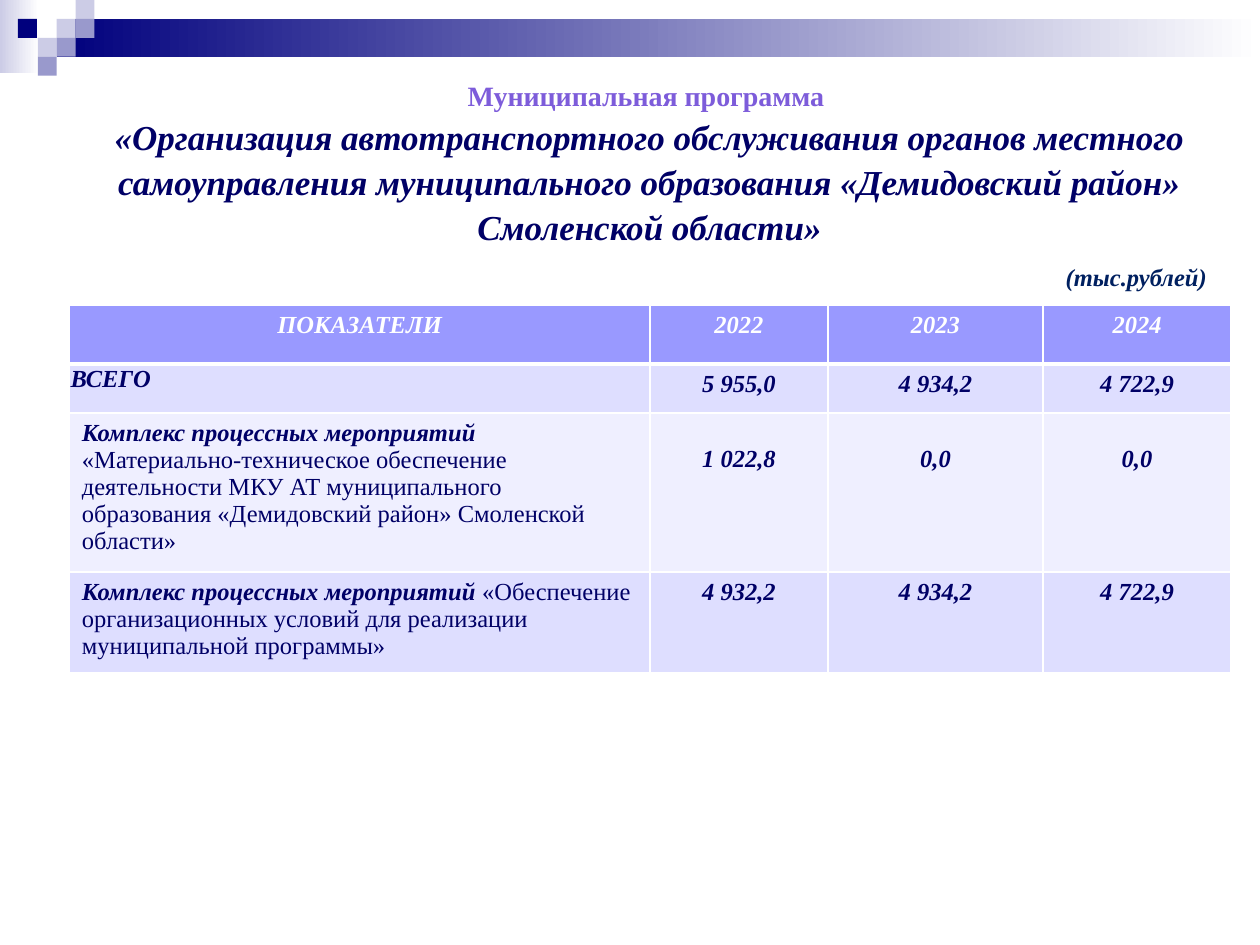
import pptx
import pptx.util
import pptx.dml.color
import pptx.enum.shapes
import pptx.enum.text
import pptx.oxml
import pptx.oxml.ns

Inches, Pt = pptx.util.Inches, pptx.util.Pt
ALIGN = pptx.enum.text.PP_ALIGN
FONT = "Times New Roman"
HUES = {
    "white": "FFFFFF", "navy": "00007D", "pale": "CCCCE6", "mid": "9999CC",
    "ink": "000066", "violet": "7D5CDA", "unit": "002060",
    "head": "9999FF", "odd": "DEDEFF", "even": "EFEFFF",
}
UNIT = 0.15  # side of one square of the corner pattern
BANDS = [  # left, top, width, height, colour at the left end
    (0, 0, 0.31, 0.58, "pale"),
    (3 * UNIT, UNIT, 10 - 3 * UNIT, 2 * UNIT, "navy"),
]
TILES = [  # column, row, colour
    (3, 1, "pale"), (4, 0, "pale"), (4, 1, "mid"), (2, 2, "pale"),
    (0.95, 1, "navy"), (3, 2, "mid"), (2, 3, "mid"),
]
TITLE = [  # text, size, colour, italic
    ("Муниципальная программа ", 16, "violet", False),
    ("«Организация автотранспортного обслуживания органов местного "
     "самоуправления муниципального образования «Демидовский район» "
     "Смоленской области»", 20, "ink", True),
]
GROUP = "Комплекс процессных мероприятий "
ROWS = [  # label in bold, label in plain, values
    ("ПОКАЗАТЕЛИ", "", ("2022", "2023", "2024")),
    ("ВСЕГО", "", ("5 955,0", "4 934,2", "4 722,9")),
    (GROUP, "«Материально-техническое обеспечение деятельности МКУ АТ "
     "муниципального образования «Демидовский район» Смоленской области»",
     ("1 022,8", "0,0", "0,0")),
    (GROUP, "«Обеспечение организационных условий для реализации "
     "муниципальной программы»", ("4 932,2", "4 934,2", "4 722,9")),
]
WIDTHS = (4.61, 1.41, 1.71, 1.49)
HEIGHTS = (0.47, 0.39, 1.26, 0.8)
FILLS = ("head", "odd", "even", "odd")


def rgb(name):
    return pptx.dml.color.RGBColor.from_string(HUES[name])


def write(par, text, size, hue, bold=True, slant=True):
    run = par.add_run()
    run.text = text
    font = run.font
    font.name, font.size = FONT, Pt(size)
    font.bold, font.italic = bold, slant
    font.color.rgb = rgb(hue)


def block(slide, left, top, width, height):
    """Add a rectangle with no line and no shadow."""
    shape = slide.shapes.add_shape(
        pptx.enum.shapes.MSO_SHAPE.RECTANGLE,
        *map(Inches, (left, top, width, height)))
    shape.shadow.inherit = False
    shape.line.fill.background()
    return shape


def edge(cell, row):
    """Draw white cell borders, thicker below the header row."""
    props = cell._tc.get_or_add_tcPr()
    for spot, (side, near) in enumerate(
            (("lnL", False), ("lnR", False), ("lnT", row == 1), ("lnB", row == 0))):
        width = Pt(3 if near else 1)
        props.insert(spot, pptx.oxml.parse_xml(
            f'<a:{side} {pptx.oxml.ns.nsdecls("a")} w="{width}"><a:solidFill>'
            f'<a:srgbClr val="{HUES["white"]}"/></a:solidFill></a:{side}>'))


def decor(slide):
    for *place, hue in BANDS:
        fill = block(slide, *place).fill
        fill.gradient()
        fill.gradient_angle = 0
        for stop, name in zip(fill.gradient_stops, (hue, "white")):
            stop.color.rgb = rgb(name)
    for col, row, hue in TILES:
        fill = block(slide, col * UNIT, row * UNIT, UNIT, UNIT).fill
        fill.solid()
        fill.fore_color.rgb = rgb(hue)


def head(slide):
    title = slide.shapes.title
    title.left, title.top, title.width, title.height = map(
        Inches, (0.31, 0.55, 9.69, 1.72))
    frame = title.text_frame
    frame.word_wrap = True
    frame.auto_size = pptx.enum.text.MSO_AUTO_SIZE.NONE
    frame.vertical_anchor = pptx.enum.text.MSO_ANCHOR.TOP
    for i, (text, size, hue, slant) in enumerate(TITLE):
        par = frame.add_paragraph() if i else frame.paragraphs[0]
        par.alignment = ALIGN.CENTER
        par.line_spacing = 1.08
        write(par, text, size, hue, slant=slant)


def grid(slide):
    table = slide.shapes.add_table(
        len(ROWS), len(WIDTHS), Inches(0.55), Inches(2.42),
        Inches(sum(WIDTHS)), Inches(sum(HEIGHTS))).table
    for col, width in zip(table.columns, WIDTHS):
        col.width = Inches(width)
    for r, (label, more, values) in enumerate(ROWS):
        table.rows[r].height = Inches(HEIGHTS[r])
        hue = "ink" if r else "white"
        for c, text in enumerate((label, *values)):
            cell = table.cell(r, c)
            cell.fill.solid()
            cell.fill.fore_color.rgb = rgb(FILLS[r])
            edge(cell, r)
            par = cell.text_frame.paragraphs[0]
            par.alignment = ALIGN.LEFT if r and not c else ALIGN.CENTER
            write(par, text, 14, hue)
            if more and not c:
                write(par, more, 14, hue, False, False)
    total = table.cell(1, 0)
    total.margin_left = total.margin_right = total.margin_top = Inches(0.01)
    total.margin_bottom = 0
    for c in range(1, len(WIDTHS)):
        table.cell(2, c).margin_top = Inches(0.26)  # level with the second line


def note(slide):
    box = slide.shapes.add_textbox(*map(Inches, (8.36, 2.03, 1.33, 0.34)))
    box.text_frame.word_wrap = False
    write(box.text_frame.paragraphs[0], "(тыс.рублей)", 14, "unit")


def main():
    deck = pptx.Presentation()
    deck.slide_width, deck.slide_height = Inches(10), Inches(7.5)
    slide = deck.slides.add_slide(deck.slide_layouts[5])
    for part in (decor, head, grid, note):
        part(slide)
    deck.save("out.pptx")


if __name__ == "__main__":
    main()
